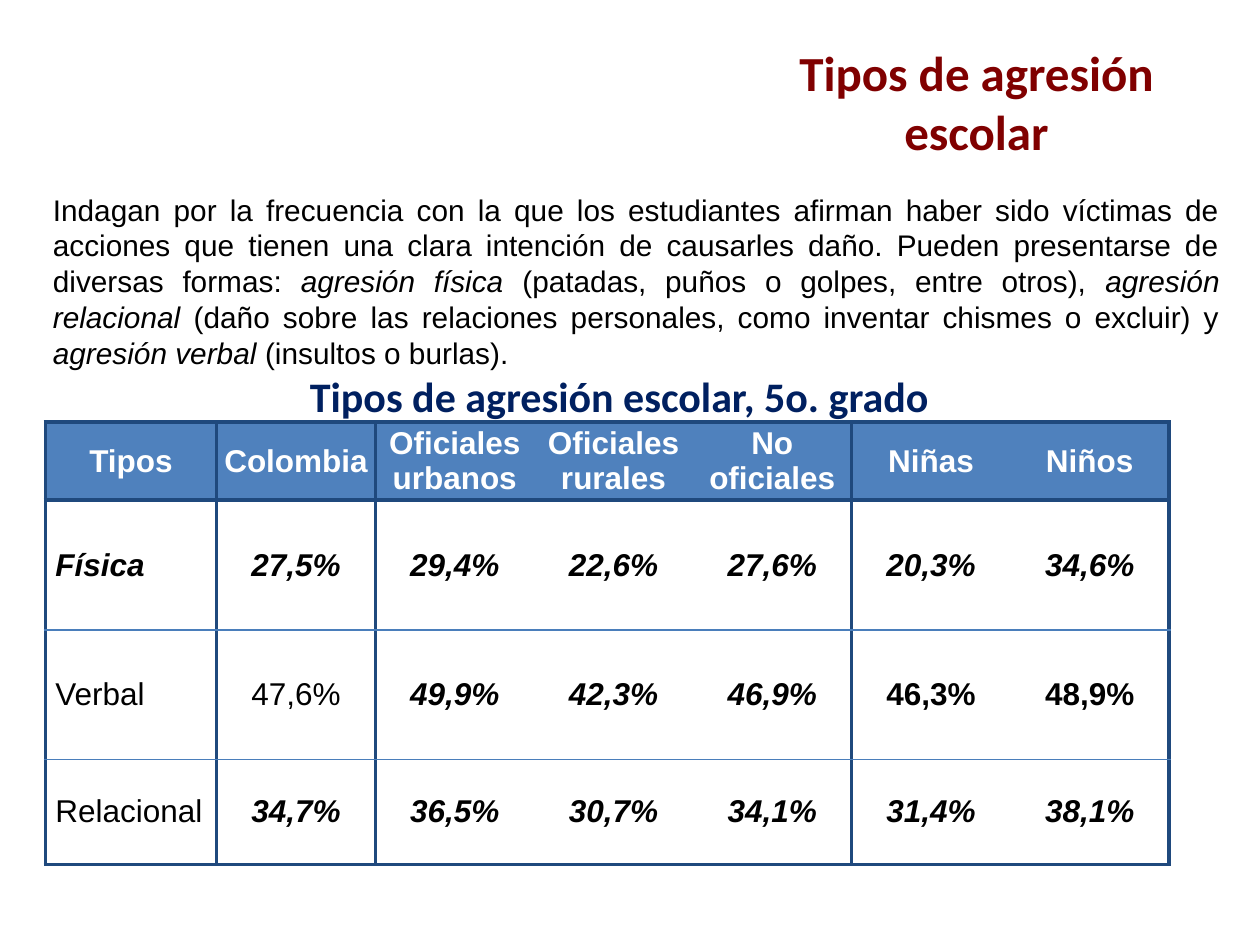
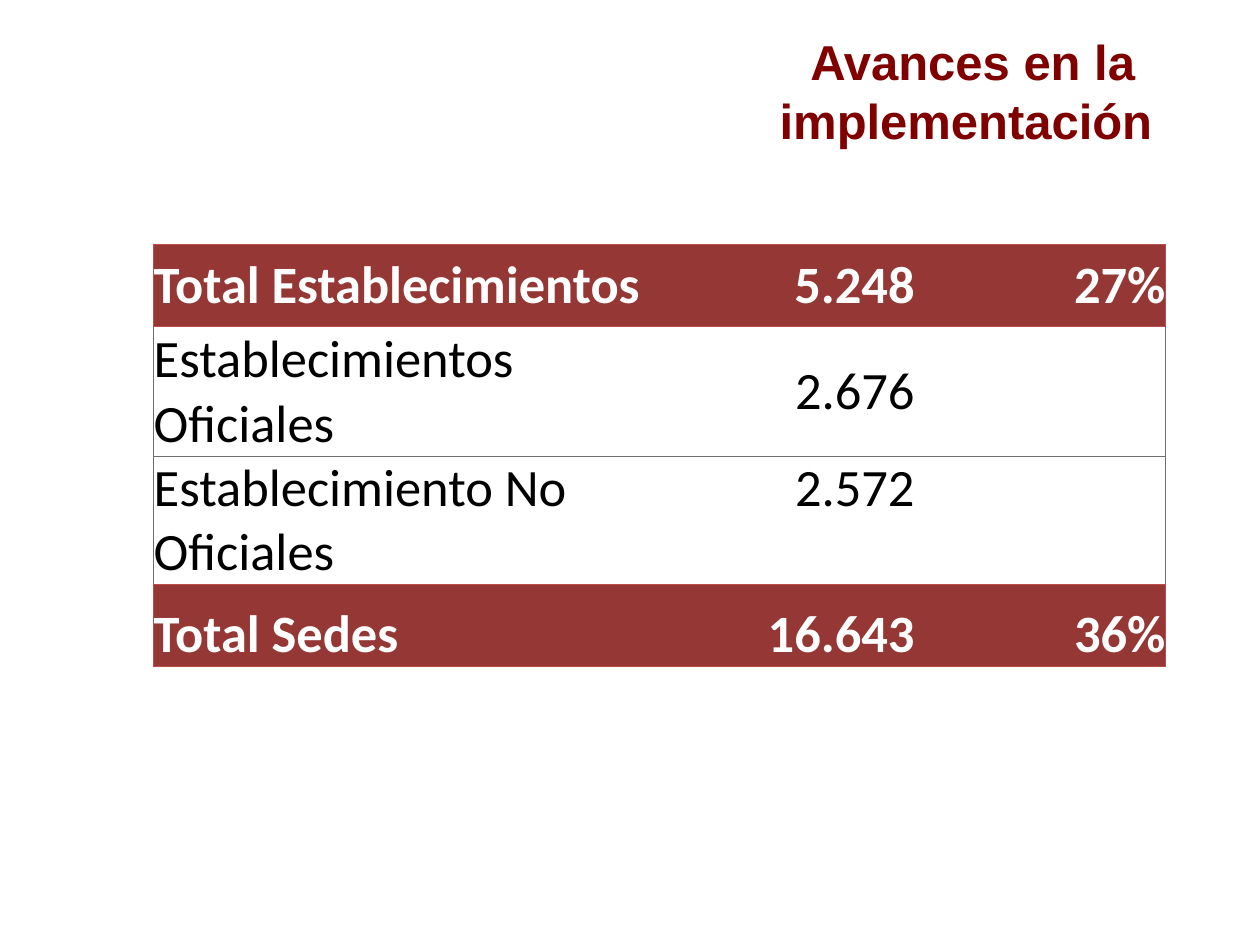
from lxml.etree import SubElement
from pptx import Presentation
from pptx.dml.color import RGBColor
from pptx.enum.text import MSO_ANCHOR as Anchor, PP_ALIGN as Align
from pptx.oxml.ns import qn
from pptx.util import Inches, Pt

# Shared colours and fonts
MAROON = RGBColor(0x80, 0x00, 0x00)
NAVY = RGBColor(0x00, 0x20, 0x60)
BLACK = RGBColor(0x00, 0x00, 0x00)
WHITE = RGBColor(0xFF, 0xFF, 0xFF)
HEADER_BLUE = RGBColor(0x4F, 0x81, 0xBD)
FRAME_BLUE = RGBColor(0x1F, 0x49, 0x7D)
RULE_BLUE = RGBColor(0x4A, 0x7E, 0xBB)
TOTAL_RED = RGBColor(0x95, 0x37, 0x35)
RULE_RED = RGBColor(0xBF, 0x4C, 0x48)
RULE_GRAY = RGBColor(0x6E, 0x6E, 0x6E)
SANS, HUMANIST = "Arial", "Calibri"
TITLE_SIZE = 28

# Border kinds: colour and width in points
FRAME = (FRAME_BLUE, 2.25)
THIN = (RULE_BLUE, 0.75)
RED = (RULE_RED, 0.75)
GRAY = (RULE_GRAY, 0.5)

# Content: b marks bold, i marks italic
DEFINITION = [
    ("Indagan por la frecuencia con la que los estudiantes afirman haber sido "
     "víctimas de acciones que tienen una clara intención de causarles daño. "
     "Pueden presentarse de diversas formas: ", ""),
    ("agresión física ", "i"),
    ("(patadas, puños o golpes, entre otros), ", ""),
    ("agresión relacional ", "i"),
    ("(daño sobre las relaciones personales, como inventar chismes o excluir) y ", ""),
    ("agresión verbal ", "i"),
    ("(insultos o burlas).", ""),
]
AGGRESSION_HEADER = ["Tipos", "Colombia", "Oficiales urbanos", "Oficiales rurales",
                     "No oficiales", "Niñas", "Niños"]
AGGRESSION_ROWS = [
    (["Física", "27,5%", "29,4%", "22,6%", "27,6%", "20,3%", "34,6%"], ["bi"] * 7),
    (["Verbal", "47,6%", "49,9%", "42,3%", "46,9%", "46,3%", "48,9%"],
     ["", "", "bi", "bi", "bi", "b", "b"]),
    (["Relacional", "34,7%", "36,5%", "30,7%", "34,1%", "31,4%", "38,1%"],
     [""] + ["bi"] * 6),
]
GROUP_EDGES = {0, 1, 2, 5, 7}  # column edges that carry a vertical line
PROGRESS_ROWS = [
    ["Total Establecimientos", "5.248", "27%"],
    ["Establecimientos Oficiales", "2.676", ""],
    ["Establecimiento No Oficiales", "2.572", ""],
    ["Total Sedes", "16.643", "36%"],
]


def write_runs(frame, runs, size, font, color, align):
    paragraph = frame.paragraphs[0]
    paragraph.alignment = align
    for text, style in runs:
        run = paragraph.add_run()
        run.text = text
        run.font.size = Pt(size)
        run.font.name = font
        run.font.color.rgb = color
        run.font.bold = "b" in style
        run.font.italic = "i" in style


def add_text_panel(slide, box, runs, size, font, color, align=Align.CENTER):
    """Text in an unfilled rectangular outline."""
    left, top, width, height = map(Inches, box)
    right, bottom = left + width, top + height
    outline = slide.shapes.build_freeform(left, top)
    outline.add_line_segments([(right, top), (right, bottom), (left, bottom)])
    panel = outline.convert_to_shape()
    panel.fill.background()
    panel.line.fill.background()
    panel.shadow.inherit = False
    frame = panel.text_frame
    frame.word_wrap = True
    frame.vertical_anchor = Anchor.TOP
    frame.margin_left = frame.margin_right = Inches(0.06)
    frame.margin_top = frame.margin_bottom = Inches(0.06)
    write_runs(frame, runs, size, font, color, align)


def add_title_box(slide, box, text, font):
    frame = slide.shapes.add_textbox(*map(Inches, box)).text_frame
    frame.word_wrap = True
    frame.vertical_anchor = Anchor.MIDDLE
    write_runs(frame, [(text, "b")], TITLE_SIZE, font, MAROON, Align.CENTER)


def add_grid(slide, left, top, widths, heights):
    table = slide.shapes.add_table(
        len(heights), len(widths), Inches(left), Inches(top),
        Inches(sum(widths)), Inches(sum(heights))).table
    table.first_row = table.horz_banding = False
    for column, width in zip(table.columns, widths):
        column.width = Inches(width)
    for row, height in zip(table.rows, heights):
        row.height = Inches(height)
    return table


def style_cell(cell, borders, fill, margin, anchor):
    """Borders come in the order left, right, top, bottom; None hides one."""
    properties = cell._tc.get_or_add_tcPr()
    for side, border in zip("LRTB", borders):
        line = SubElement(properties, qn(f"a:ln{side}"))
        if border is None:
            SubElement(line, qn("a:noFill"))
            continue
        color, width = border
        line.set("w", str(Pt(width)))
        solid = SubElement(line, qn("a:solidFill"))
        SubElement(solid, qn("a:srgbClr")).set("val", str(color))
    if fill is None:
        cell.fill.background()
    else:
        cell.fill.solid()
        cell.fill.fore_color.rgb = fill
    cell.margin_left = cell.margin_right = Inches(margin)
    cell.margin_top = cell.margin_bottom = Inches(margin)
    cell.vertical_anchor = anchor


def add_aggression_table(slide):
    table = add_grid(slide, 0.36, 3.35, [1.36] + [1.26] * 6, [0.62, 1.03, 1.03, 0.83])
    rows = [(AGGRESSION_HEADER, ["b"] * 7)] + AGGRESSION_ROWS
    row_edges = [FRAME, FRAME, THIN, THIN, FRAME]
    for r, (texts, styles) in enumerate(rows):
        for c, (text, style) in enumerate(zip(texts, styles)):
            cell = table.cell(r, c)
            sides = [FRAME if edge in GROUP_EDGES else None for edge in (c, c + 1)]
            style_cell(cell, sides + row_edges[r:r + 2],
                       HEADER_BLUE if r == 0 else None, 0.01, Anchor.MIDDLE)
            is_label = r > 0 and c == 0
            if is_label:
                cell.margin_left = Inches(0.08)
            write_runs(cell.text_frame, [(text, style)], 18, SANS,
                       WHITE if r == 0 else BLACK,
                       Align.JUSTIFY if is_label else Align.CENTER)


def add_progress_table(slide):
    table = add_grid(slide, 1.22, 1.94, [4.09, 1.95, 1.99], [0.65, 1.03, 1.02, 0.65])
    row_edges = [RED, RED, GRAY, RED, RED]
    value_anchors = [Anchor.MIDDLE, Anchor.MIDDLE, Anchor.TOP, Anchor.BOTTOM]
    for r, texts in enumerate(PROGRESS_ROWS):
        is_total = r in (0, 3)
        side = RED if is_total else GRAY
        for c, text in enumerate(texts):
            cell = table.cell(r, c)
            label_anchor = Anchor.MIDDLE if r == 0 else Anchor.BOTTOM
            style_cell(cell,
                       [side if c == 0 else None, side if c == 2 else None]
                       + row_edges[r:r + 2],
                       TOTAL_RED if is_total else None, 0,
                       label_anchor if c == 0 else value_anchors[r])
            if text:
                write_runs(cell.text_frame, [(text, "b" if is_total else "")], 30,
                           HUMANIST, WHITE if is_total else BLACK,
                           Align.LEFT if c == 0 else Align.RIGHT)


def build_aggression_slide(slide):
    add_text_panel(slide, (5.86, 0.28, 3.78, 0.58),
                   [("Tipos de agresión escolar", "b")], TITLE_SIZE, HUMANIST, MAROON)
    add_aggression_table(slide)
    add_text_panel(slide, (0.67, 2.88, 8.49, 0.51),
                   [("Tipos de agresión escolar, 5o. grado", "b")], 24, HUMANIST, NAVY)
    add_text_panel(slide, (0.36, 1.46, 9.38, 1.64), DEFINITION, 17, SANS, BLACK,
                   align=Align.JUSTIFY)


def build_progress_slide(slide):
    add_title_box(slide, (5.24, 0.21, 4.96, 1.02), "Avances en la implementación ", SANS)
    add_progress_table(slide)


def main():
    deck = Presentation()
    deck.slide_width, deck.slide_height = Inches(10), Inches(7.5)
    blank = deck.slide_layouts[6]
    for build in (build_aggression_slide, build_progress_slide):
        build(deck.slides.add_slide(blank))
    deck.save("out.pptx")


if __name__ == "__main__":
    main()
